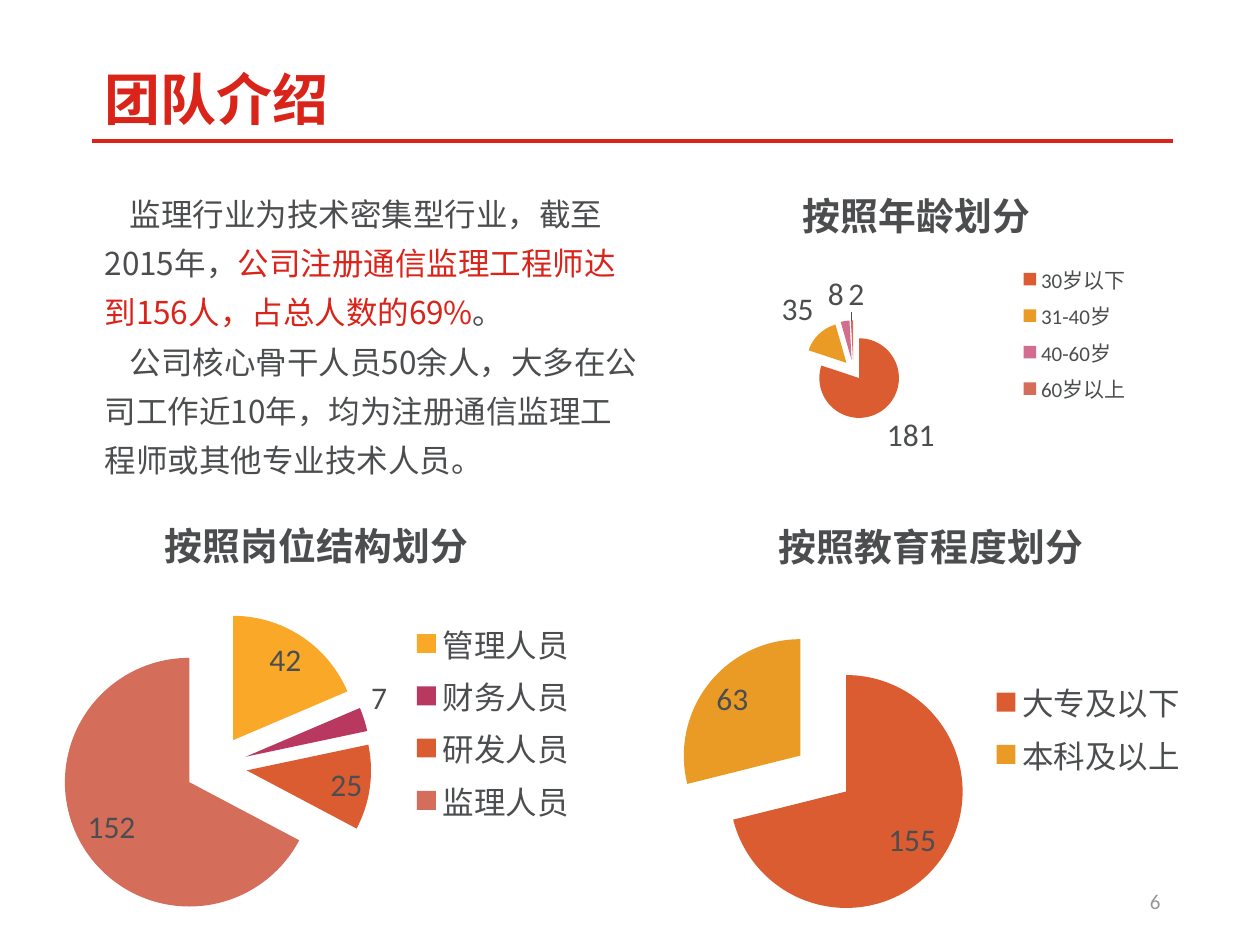
from dataclasses import dataclass

from lxml.etree import SubElement
from pptx import Presentation
from pptx.chart.data import CategoryChartData
from pptx.dml.color import RGBColor
from pptx.enum.chart import XL_CHART_TYPE as ChartType
from pptx.enum.chart import XL_LABEL_POSITION as LabelPosition
from pptx.enum.chart import XL_LEGEND_POSITION as LegendPosition
from pptx.enum.shapes import MSO_CONNECTOR as Connector
from pptx.enum.text import MSO_ANCHOR as Anchor
from pptx.enum.text import MSO_AUTO_SIZE as AutoSize
from pptx.enum.text import PP_ALIGN as Align
from pptx.oxml.ns import qn
from pptx.util import Inches, Pt


@dataclass(frozen=True)
class Theme:
    red: str = "DA241A"
    ink: str = "4B4D4F"
    grey: str = "969797"
    amber: str = "FAA828"
    gold: str = "EA9B26"
    orange: str = "DC5C31"
    berry: str = "B83860"
    pink: str = "D36D8D"
    coral: str = "D46E5A"
    title_font: str = "Montserrat"
    body_font: str = "Noto Sans CJK SC"
    chart_font: str = "Calibri"
    title_size: float = 32
    chart_title_size: float = 21.6
    body_size: float = 18
    small_size: float = 12


THEME = Theme()


def style_font(font, name, size, color, bold=False):
    font.name, font.size, font.bold = name, Pt(size), bold
    font.color.rgb = RGBColor.from_string(color)


def place(shape, left, top, width, height):
    shape.left, shape.top = Inches(left), Inches(top)
    shape.width, shape.height = Inches(width), Inches(height)


def prepare_frame(shape, anchor):
    frame = shape.text_frame
    frame.word_wrap = True
    frame.auto_size = AutoSize.NONE
    frame.vertical_anchor = anchor
    return frame


def add_run(paragraph, text, font_name, size, color, bold=False):
    run = paragraph.add_run()
    run.text = text
    style_font(run.font, font_name, size, color, bold)
    # East Asian characters need their own typeface
    SubElement(run.font._element, qn("a:ea"), typeface=THEME.body_font)


def fill_title(slide, text):
    title = slide.shapes.title
    place(title, 0.73, 0.52, 6.55, 0.59)
    paragraph = prepare_frame(title, Anchor.TOP).paragraphs[0]
    paragraph.alignment = Align.LEFT
    paragraph.line_spacing = 0.9
    add_run(paragraph, text, THEME.title_font, THEME.title_size, THEME.red, True)


def add_rule(slide):
    rule = slide.shapes.add_connector(
        Connector.STRAIGHT, Inches(0.73), Inches(1.12), Inches(9.31), Inches(1.12))
    rule.line.color.rgb = RGBColor.from_string(THEME.red)
    rule.line.width = Pt(2.25)
    SubElement(rule._element.spPr, qn("a:effectLst"))


def fill_body(slide, paragraphs):
    body = slide.placeholders[1]
    place(body, 0.73, 1.41, 4.45, 2.46)
    frame = prepare_frame(body, Anchor.TOP)
    for index, runs in enumerate(paragraphs):
        paragraph = frame.add_paragraph() if index else frame.paragraphs[0]
        paragraph.line_spacing = 1.3
        paragraph.space_before = Pt(0)
        properties = paragraph._p.get_or_add_pPr()
        properties.set("marL", "0")
        properties.set("indent", str(Inches(0.2)))
        SubElement(properties, qn("a:buNone"))
        for text, color in runs:
            add_run(paragraph, text, THEME.body_font, THEME.body_size, color)


def set_plot_layout(chart, box):
    plot_area = chart._chartSpace.chart.plotArea
    layout = plot_area.find(qn("c:layout"))
    if layout is None:
        layout = SubElement(plot_area, qn("c:layout"))
        plot_area.insert(0, layout)
    manual = SubElement(layout, qn("c:manualLayout"))
    settings = [("layoutTarget", "inner"), ("xMode", "edge"), ("yMode", "edge")]
    settings += zip("xywh", map(str, box))
    for name, value in settings:
        SubElement(manual, qn(f"c:{name}"), val=value)


def add_pie(slide, title, place_box, plot_box, slices, legend_size=THEME.body_size):
    data = CategoryChartData()
    data.categories = [name for name, _, _ in slices]
    data.add_series(title, [value for _, value, _ in slices])
    chart = slide.shapes.add_chart(
        ChartType.PIE_EXPLODED, *map(Inches, place_box), data).chart
    style_font(chart.font, THEME.chart_font, THEME.body_size, THEME.ink)

    # Title and legend
    chart.has_title = True
    add_run(chart.chart_title.text_frame.paragraphs[0], title,
            THEME.chart_font, THEME.chart_title_size, THEME.ink, True)
    chart.chart_title.include_in_layout = False
    chart.has_legend = True
    chart.legend.position = LegendPosition.RIGHT
    chart.legend.include_in_layout = False
    style_font(chart.legend.font, THEME.chart_font, legend_size, THEME.ink)

    # Slices and their values
    plot = chart.plots[0]
    plot.vary_by_categories = True
    plot.has_data_labels = True
    labels = plot.data_labels
    labels.show_value = True
    labels.show_percentage = False
    labels.position = LabelPosition.BEST_FIT
    style_font(labels.font, THEME.chart_font, THEME.body_size, THEME.ink)
    for index, (_, _, color) in enumerate(slices):
        fill = plot.series[0].points[index].format.fill
        fill.solid()
        fill.fore_color.rgb = RGBColor.from_string(color)
    set_plot_layout(chart, plot_box)


def add_page_number(slide, number):
    box = slide.shapes.add_textbox(
        Inches(7.06), Inches(6.95), Inches(2.25), Inches(0.4))
    paragraph = prepare_frame(box, Anchor.MIDDLE).paragraphs[0]
    paragraph.alignment = Align.RIGHT
    add_run(paragraph, number, THEME.chart_font, THEME.small_size, THEME.grey)


def main():
    presentation = Presentation()
    presentation.slide_width, presentation.slide_height = Inches(10), Inches(7.5)
    slide = presentation.slides.add_slide(presentation.slide_layouts[1])

    # Heading and introduction
    fill_title(slide, "团队介绍")
    add_rule(slide)
    fill_body(slide, [
        [("监理行业为技术密集型行业，截至2015年，", THEME.ink),
         ("公司注册通信监理工程师达到156人，占总人数的69%", THEME.red),
         ("。", THEME.ink)],
        [("公司核心骨干人员50余人，大多在公司工作近10年，"
          "均为注册通信监理工程师或其他专业技术人员。", THEME.ink)],
    ])

    # Staff by post, age and education
    add_pie(slide, "按照岗位结构划分", (0.35, 3.88, 4.33, 3.7), (0.03, 0.26, 0.57, 0.67), [
        ("管理人员", 42, THEME.amber), ("财务人员", 7, THEME.berry),
        ("研发人员", 25, THEME.orange), ("监理人员", 152, THEME.coral)])
    add_pie(slide, "按照年龄划分", (5.48, 1.28, 3.59, 2.74), (0.25, 0.46, 0.22, 0.29), [
        ("30岁以下", 181, THEME.orange), ("31-40岁", 35, THEME.gold),
        ("40-60岁", 8, THEME.pink), ("60岁以上", 2, THEME.coral)],
        THEME.small_size)
    add_pie(slide, "按照教育程度划分", (5.25, 3.88, 4.28, 3.8), (0.03, 0.29, 0.54, 0.61), [
        ("大专及以下", 155, THEME.orange), ("本科及以上", 63, THEME.gold)])

    add_page_number(slide, "6")
    presentation.save("out.pptx")


if __name__ == "__main__":
    main()
